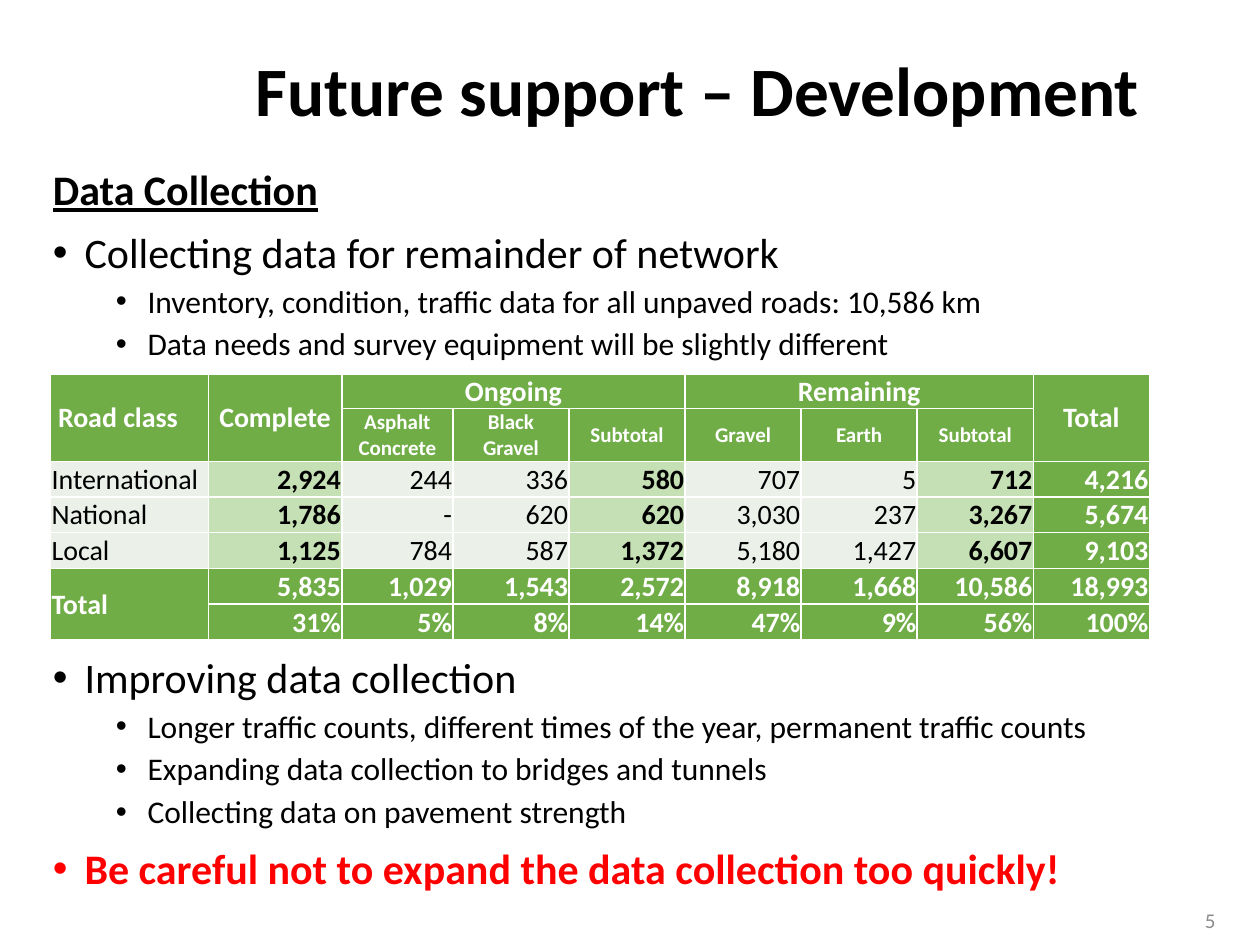
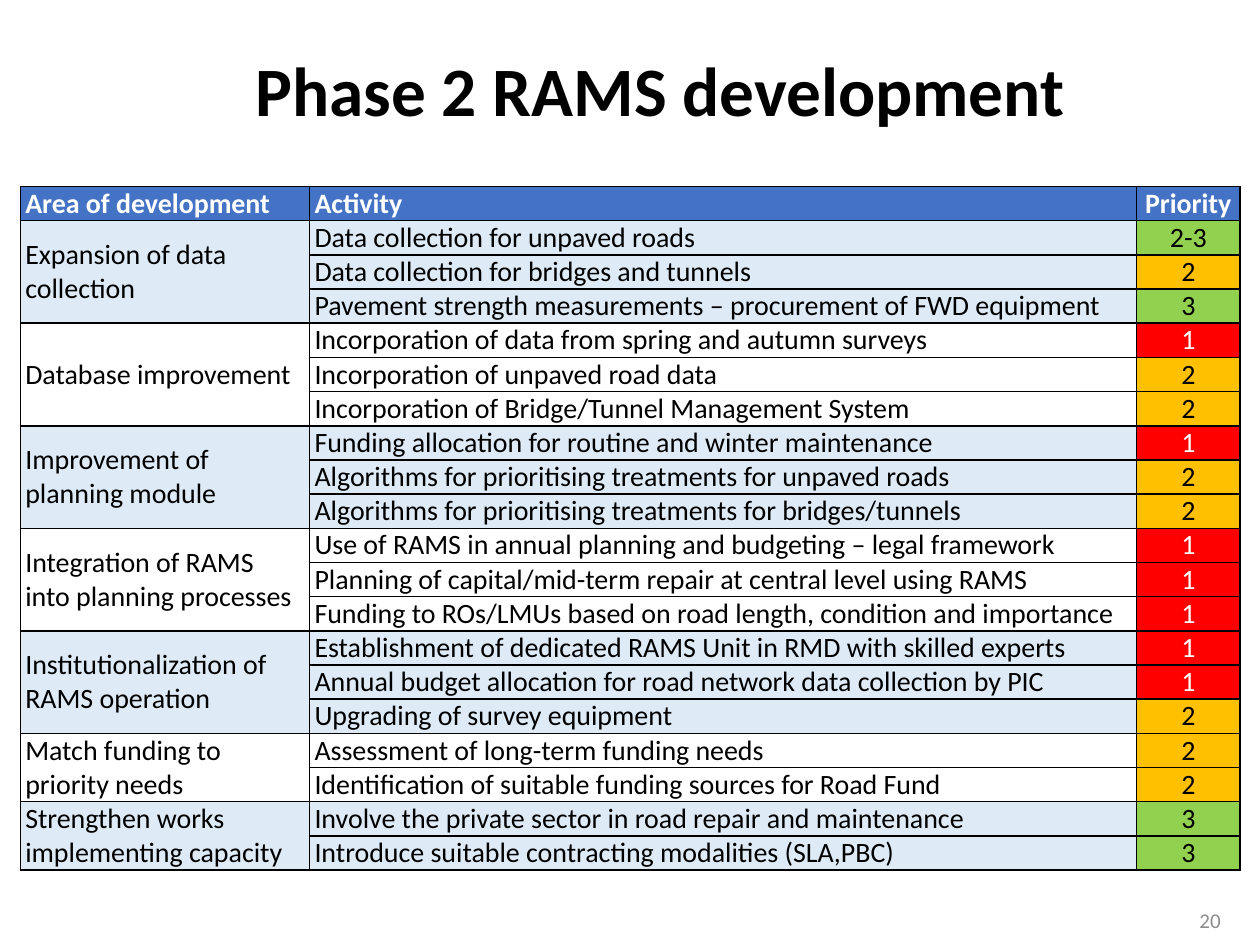
from dataclasses import dataclass, field

from lxml import etree
from pptx import Presentation
from pptx import slide as sl
from pptx import table as tb
from pptx.dml import color as col
from pptx.enum import text as et
from pptx.oxml import ns
from pptx.util import Cm, Pt

FONT = "Calibri"
BLACK, WHITE, RED, GREY = "000000", "FFFFFF", "FF0000", "8C8C8C"
GREEN, LIGHT, PALE = "70AD47", "C5E0B4", "EBF1E9"
BLUE, SKY = "4472C4", "DEEBF7"
LEFT, MID, RIGHT, FULL = (et.PP_ALIGN.LEFT, et.PP_ALIGN.CENTER,
                          et.PP_ALIGN.RIGHT, et.PP_ALIGN.JUSTIFY)
CENTRE = et.MSO_ANCHOR.MIDDLE
TOP = et.MSO_ANCHOR.TOP


@dataclass
class Look:
    """Format of one table cell."""
    fill: str
    ink: str = BLACK
    bold: bool = False
    size: float = 16
    align: et.PP_ALIGN = LEFT
    anchor: et.MSO_ANCHOR = CENTRE


@dataclass
class Line:
    """One paragraph of the body list."""
    words: str
    level: int = 0
    gap: float = 10
    bullet: bool = True
    font: dict = field(default_factory=dict)


@dataclass
class Grid:
    """Place, column widths and row heights of a table, in cm."""
    left: float
    top: float
    cols: list[float]
    rows: list[float]
    edge: str
    inset: tuple[float, float, float, float]


def rgb(code: str) -> col.RGBColor:
    return col.RGBColor.from_string(code)


def put(target: object, values: dict) -> None:
    for name, value in values.items():
        setattr(target, name, value)


def place(shape: object, *box: float) -> None:
    put(shape, dict(zip(("left", "top", "width", "height"), map(Cm, box))))


def write(para: object, words: str, size: float, ink: str = BLACK, **font) -> None:
    run = para.add_run()
    run.text = words
    put(run.font, {"name": FONT, "size": Pt(size), "bold": False, **font})
    run.font.color.rgb = rgb(ink)


def start(deck: Presentation, layout: int, title: str, number: str) -> sl.Slide:
    """Add a slide with its title and page number."""
    page = deck.slides.add_slide(deck.slide_layouts[layout])
    head = page.shapes.title
    place(head, 4.9, 1.02, 20.5, 1.75)
    put(head.text_frame, {"vertical_anchor": CENTRE, "word_wrap": True,
                          "auto_size": et.MSO_AUTO_SIZE.NONE})
    para = head.text_frame.paragraphs[0]
    put(para, {"alignment": LEFT, "line_spacing": 0.9})
    write(para, title, 39.6, bold=True)

    foot = page.shapes.add_textbox(Cm(23.39), Cm(18.06), Cm(2.01), Cm(0.99))
    put(foot.text_frame, {"vertical_anchor": CENTRE, "word_wrap": True})
    para = foot.text_frame.paragraphs[0]
    para.alignment = MID
    write(para, number, 12, GREY)
    return page


def mark(para: object, line: Line) -> None:
    """Set the bullet and indent of a list line."""
    props = para._p.get_or_add_pPr()
    if line.bullet:
        props.set("marL", str(Cm((0.64, 1.91)[line.level])))
        props.set("indent", str(-Cm(0.64)))
        etree.SubElement(props, ns.qn("a:buFont"), typeface="Arial")
        etree.SubElement(props, ns.qn("a:buChar"), char="•")
    else:
        put_none = {"marL": "0", "indent": "0"}
        props.attrib.update(put_none)
        etree.SubElement(props, ns.qn("a:buNone"))


def fill_list(body: object, lines: list[Line]) -> None:
    place(body, 0.81, 3.28, 24.59, 15.34)
    frame = body.text_frame
    put(frame, {"auto_size": et.MSO_AUTO_SIZE.NONE, "vertical_anchor": TOP})
    for i, line in enumerate(lines):
        para = frame.add_paragraph() if i else frame.paragraphs[0]
        mark(para, line)
        put(para, {"level": line.level, "line_spacing": 0.9, "alignment": LEFT,
                   "space_before": Pt(line.gap), "space_after": Pt(0)})
        write(para, line.words, (24, 18)[line.level], **line.font)


def add_grid(page: sl.Slide, grid: Grid) -> tb.Table:
    size = [Cm(v) for v in (grid.left, grid.top, sum(grid.cols), sum(grid.rows))]
    table = page.shapes.add_table(len(grid.rows), len(grid.cols), *size).table
    put(table, {"first_row": False, "horz_banding": False})
    for part, width in zip(table.columns, grid.cols):
        part.width = Cm(width)
    for part, height in zip(table.rows, grid.rows):
        part.height = Cm(height)
    sides = ("margin_left", "margin_top", "margin_right", "margin_bottom")
    for cell in table.iter_cells():
        put(cell, dict(zip(sides, map(Cm, grid.inset))))
        border(cell, grid.edge)
    return table


def border(cell: object, ink: str) -> None:
    props = cell._tc.get_or_add_tcPr()
    for side in ("lnL", "lnR", "lnT", "lnB"):
        line = etree.SubElement(props, ns.qn(f"a:{side}"), w=str(Pt(1)))
        fill = etree.SubElement(line, ns.qn("a:solidFill"))
        etree.SubElement(fill, ns.qn("a:srgbClr"), val=ink)


def dress(cell: object, words: str, look: Look) -> None:
    cell.fill.solid()
    cell.fill.fore_color.rgb = rgb(look.fill)
    cell.vertical_anchor = look.anchor
    if cell.is_spanned:
        return
    frame = cell.text_frame
    for i, part in enumerate(words.split("\n")):
        para = frame.add_paragraph() if i else frame.paragraphs[0]
        para.alignment = look.align
        write(para, part, look.size, look.ink, bold=look.bold)


LINES = [
    Line("Data Collection", gap=0, bullet=False,
         font={"bold": True, "underline": True}),
    Line("Collecting data for remainder of network"),
    Line("Inventory, condition, traffic data for all unpaved roads: 10,586 km", 1, 5),
    Line("Data needs and survey equipment will be slightly different", 1, 5),
    Line("Improving data collection", gap=168),
    Line("Longer traffic counts, different times of the year, "
         "permanent traffic counts", 1, 5),
    Line("Expanding data collection to bridges and tunnels", 1, 5),
    Line("Collecting data on pavement strength", 1, 5),
    Line("Be careful not to expand the data collection too quickly!",
         font={"bold": True, "ink": RED}),
]

ROADS = [
    ["Road class", "Complete", "Ongoing", "", "", "Remaining", "", "", "Total"],
    ["", "", "Asphalt Concrete", "Black\nGravel", "Subtotal",
     "Gravel", "Earth", "Subtotal", ""],
    ["International", "2,924", "244", "336", "580", "707", "5", "712", "4,216"],
    ["National", "1,786", "-", "620", "620", "3,030", "237", "3,267", "5,674"],
    ["Local", "1,125", "784", "587", "1,372", "5,180", "1,427", "6,607", "9,103"],
    ["Total", "5,835", "1,029", "1,543", "2,572", "8,918", "1,668", "10,586", "18,993"],
    ["", "31%", "5%", "8%", "14%", "47%", "9%", "56%", "100%"],
]
# first row, first column, last row, last column
SPANS = [(0, 0, 1, 0), (0, 1, 1, 1), (0, 2, 0, 4), (0, 5, 0, 7),
         (0, 8, 1, 8), (5, 0, 6, 0)]

AREAS = {
    "Expansion of data collection": [
        ("Data collection for unpaved roads", "2-3"),
        ("Data collection for bridges and tunnels", "2"),
        ("Pavement strength measurements – procurement of FWD equipment", "3")],
    "Database improvement": [
        ("Incorporation of data from spring and autumn surveys", "1"),
        ("Incorporation of unpaved road data", "2"),
        ("Incorporation of Bridge/Tunnel Management System", "2")],
    "Improvement of planning module": [
        ("Funding allocation for routine and winter maintenance", "1"),
        ("Algorithms for prioritising treatments for unpaved roads", "2"),
        ("Algorithms for prioritising treatments for bridges/tunnels", "2")],
    "Integration of RAMS into planning processes": [
        ("Use of RAMS in annual planning and budgeting – legal framework", "1"),
        ("Planning of capital/mid-term repair at central level using RAMS", "1"),
        ("Funding to ROs/LMUs based on road length, condition and importance", "1")],
    "Institutionalization of RAMS operation": [
        ("Establishment of dedicated RAMS Unit in RMD with skilled experts", "1"),
        ("Annual budget allocation for road network data collection by PIC", "1"),
        ("Upgrading of survey equipment", "2")],
    "Match funding to priority needs": [
        ("Assessment of long-term funding needs", "2"),
        ("Identification of suitable funding sources for Road Fund", "2")],
    "Strengthen works implementing capacity": [
        ("Involve the private sector in road repair and maintenance", "3"),
        ("Introduce suitable contracting modalities (SLA,PBC)", "3")],
}
RANKS = {"1": (RED, WHITE), "2": ("FFC000", BLACK),
         "3": ("92D050", BLACK), "2-3": ("92D050", BLACK)}


def road_look(row: int, column: int) -> Look:
    if row < 2:
        return Look(GREEN, WHITE, True, 12 if row else 16, MID if column else LEFT)
    align = RIGHT if column else LEFT
    if row > 4 or column == 8:
        return Look(GREEN, WHITE, True, align=align)
    bold = column in (1, 4, 7)
    return Look(LIGHT if bold else PALE, bold=bold, align=align)


def add_roads(page: sl.Slide) -> None:
    grid = Grid(1.02, 7.54, [3.18, 2.69, 2.24] + [2.34] * 6,
                [0.7, 1.06] + [0.72] * 5, WHITE, (0.02, 0.02, 0.02, 0))
    table = add_grid(page, grid)
    for top, left, low, right in SPANS:
        table.cell(top, left).merge(table.cell(low, right))
    for r, row in enumerate(ROADS):
        for c, words in enumerate(row):
            dress(table.cell(r, c), words, road_look(r, c))
    table.cell(0, 0).margin_left = Cm(0.15)


def add_plan(page: sl.Slide) -> None:
    count = 1 + sum(map(len, AREAS.values()))
    grid = Grid(0.41, 3.76, [5.83, 16.67, 2.09], [0.69] * count, BLACK,
                (0.1, 0, 0.1, 0))
    table = add_grid(page, grid)
    heads = zip(("Area of development", "Activity", "Priority"), (LEFT, FULL, MID))
    for c, (words, align) in enumerate(heads):
        dress(table.cell(0, c), words, Look(BLUE, WHITE, True, align=align))
    r = 1
    for i, (area, tasks) in enumerate(AREAS.items()):
        tint = WHITE if i % 2 else SKY
        table.cell(r, 0).merge(table.cell(r + len(tasks) - 1, 0))
        for task, rank in tasks:
            dress(table.cell(r, 0), area, Look(tint))
            dress(table.cell(r, 1), task, Look(tint, align=FULL, anchor=TOP))
            dress(table.cell(r, 2), rank, Look(*RANKS[rank], align=MID, anchor=TOP))
            r += 1


def main() -> None:
    deck = Presentation()
    put(deck, {"slide_width": Cm(25.4), "slide_height": Cm(19.05)})
    page = start(deck, 1, "Future support – Development", "5")
    fill_list(page.placeholders[1], LINES)
    add_roads(page)
    add_plan(start(deck, 5, "Phase 2 RAMS development", "20"))
    deck.save("out.pptx")


if __name__ == "__main__":
    main()
